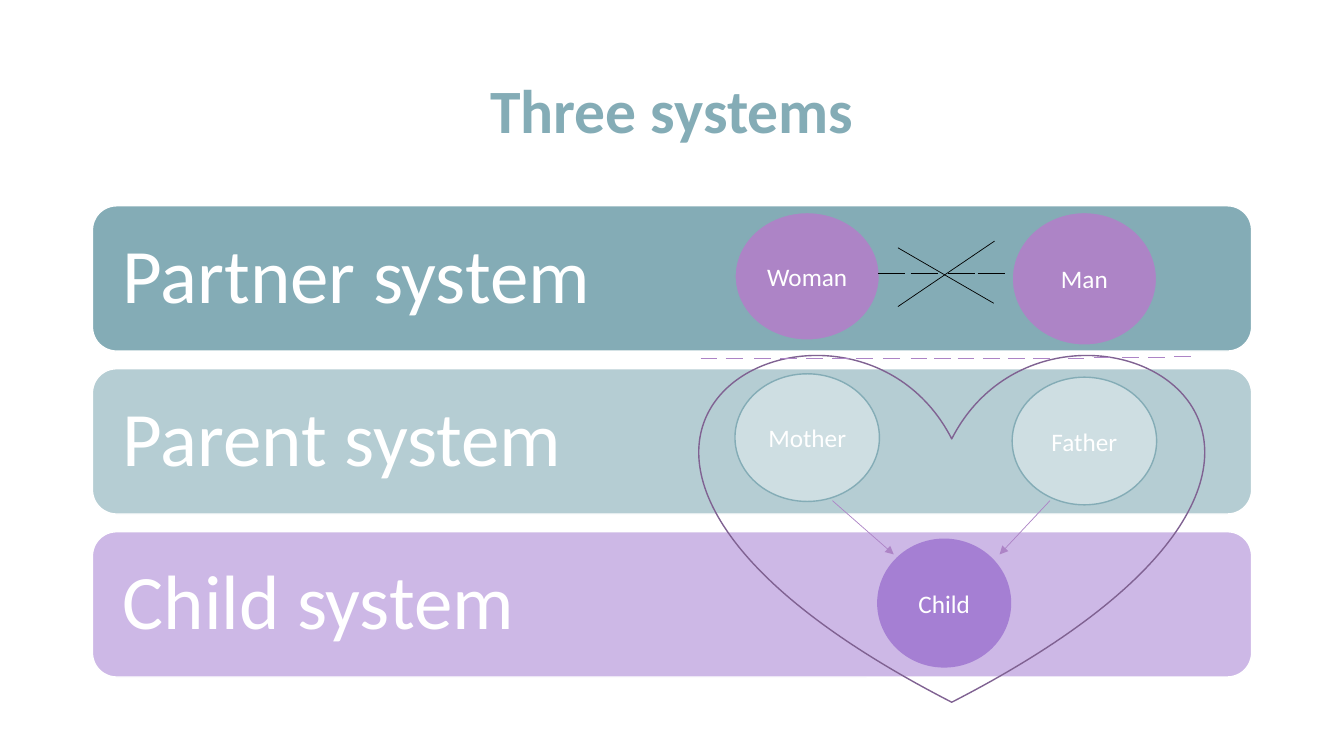
from lxml import etree
from pptx import Presentation
from pptx import util as u
from pptx.dml.color import RGBColor
from pptx.enum import shapes, text
from pptx.oxml.ns import qn

COLORS = {
    "teal": "84ACB6", "mist": "B5CDD3", "pale": "CEDEE2",
    "lilac": "CDB8E6", "mauve": "AD84C6", "violet": "A57FD3",
    "plum": "806292", "white": "FFFFFF", "black": "000000",
}
COLS, ROWS = 16, 9


def color(name):
    return RGBColor.from_string(COLORS[name])


class Board:
    face = "Calibri"

    def __init__(self, deck):
        self.slide = deck.slides.add_slide(deck.slide_layouts[5])
        self.col = deck.slide_width / COLS
        self.row = deck.slide_height / ROWS

    def x(self, cols):
        return u.Emu(round(cols * self.col))

    def y(self, rows):
        return u.Emu(round(rows * self.row))

    def box(self, left, top, width, height):
        return self.x(left), self.y(top), self.x(width), self.y(height)

    def label(self, shape, words, size, tint, align, bold=False):
        frame = shape.text_frame
        frame.word_wrap = True
        frame.vertical_anchor = text.MSO_ANCHOR.MIDDLE
        para = frame.paragraphs[0]
        para.text = words
        para.alignment = align
        font = para.font
        font.name, font.size, font.bold = self.face, u.Pt(size), bold
        font.color.rgb = color(tint)
        return frame, para

    def title(self, words, *area):
        head = self.slide.shapes.title
        head.left, head.top, head.width, head.height = self.box(*area)
        _, para = self.label(head, words, 44, "teal", text.PP_ALIGN.CENTER, True)
        para.line_spacing = 0.9

    def shape(self, kind, area, fill, edge):
        item = self.slide.shapes.add_shape(kind, *self.box(*area))
        item.shadow.inherit = False
        if fill:
            item.fill.solid()
            item.fill.fore_color.rgb = color(fill)
        else:
            item.fill.background()
        item.line.color.rgb = color(edge)
        item.line.width = u.Pt(1)
        return item

    def bar(self, words, fill, *area):
        item = self.shape(shapes.MSO_SHAPE.ROUNDED_RECTANGLE, area, fill, "white")
        frame, para = self.label(item, words, 55, "white", text.PP_ALIGN.LEFT)
        frame.margin_left = frame.margin_right = u.Inches(0.23)
        para.line_spacing = 0.9

    def oval(self, words, fill, edge, *area):
        item = self.shape(shapes.MSO_SHAPE.OVAL, area, fill, edge)
        self.label(item, words, 18, "white", text.PP_ALIGN.CENTER)

    def heart(self, edge, *area):
        self.shape(shapes.MSO_SHAPE.HEART, area, None, edge)

    def line(self, tint, x1, y1, x2, y2, arrow=False):
        link = self.slide.shapes.add_connector(
            shapes.MSO_CONNECTOR.STRAIGHT,
            self.x(x1), self.y(y1), self.x(x2), self.y(y2))
        link.line.color.rgb = color(tint)
        link.line.width = u.Pt(0.5)
        props = link._element.spPr
        if arrow:
            etree.SubElement(props.find(qn("a:ln")), qn("a:tailEnd"), type="triangle")
        etree.SubElement(props, qn("a:effectLst"))

    def dashes(self, tint, y, size, starts):
        for x in starts:
            self.line(tint, x, y, x + size, y)


def main():
    deck = Presentation()
    deck.slide_width, deck.slide_height = u.Inches(13.33), u.Inches(7.5)
    board = Board(deck)

    board.title("Three systems", 1.1, 0.48, 13.8, 1.74)
    bars = [("Partner system", "teal"), ("Parent system", "mist"),
            ("Child system", "lilac")]
    for i, (words, fill) in enumerate(bars):
        board.bar(words, fill, 1.1, 2.45 + 1.94 * i, 13.8, 1.73)

    left, right = 8.75, 12.05
    board.oval("Woman", "mauve", "teal", left, 2.53, 1.72, 1.52)
    board.oval("Mother", "pale", "teal", left, 4.45, 1.72, 1.52)
    board.oval("Child", "violet", "violet", 10.45, 6.42, 1.58, 1.52)
    board.oval("Father", "pale", "teal", right, 4.49, 1.72, 1.52)
    board.oval("Man", "mauve", "teal", right, 2.53, 1.72, 1.58)
    board.heart("plum", 8.34, 4.18, 5.98, 4.18)

    for start, end in [(9.91, 10.64), (12.5, 11.9)]:
        board.line("mauve", start, 5.96, end, 6.6, arrow=True)

    border = {
        4.27: [8.34, 8.64, 8.98, 9.29, 9.6, 9.91, 10.19, 10.51,
               10.84, 11.12, 11.4, 11.7, 12, 12.3, 12.71],
        4.25: [13.02, 13.36, 13.67],
        4.24: [13.98],
    }
    for y, starts in border.items():
        board.dashes("mauve", y, 0.2, starts)

    board.dashes("black", 3.26, 0.33, [10.45, 10.84, 11.28, 11.64])
    board.line("black", 10.69, 2.95, 11.83, 3.61)
    board.line("black", 11.84, 2.87, 10.69, 3.65)

    deck.save("out.pptx")


if __name__ == "__main__":
    main()
